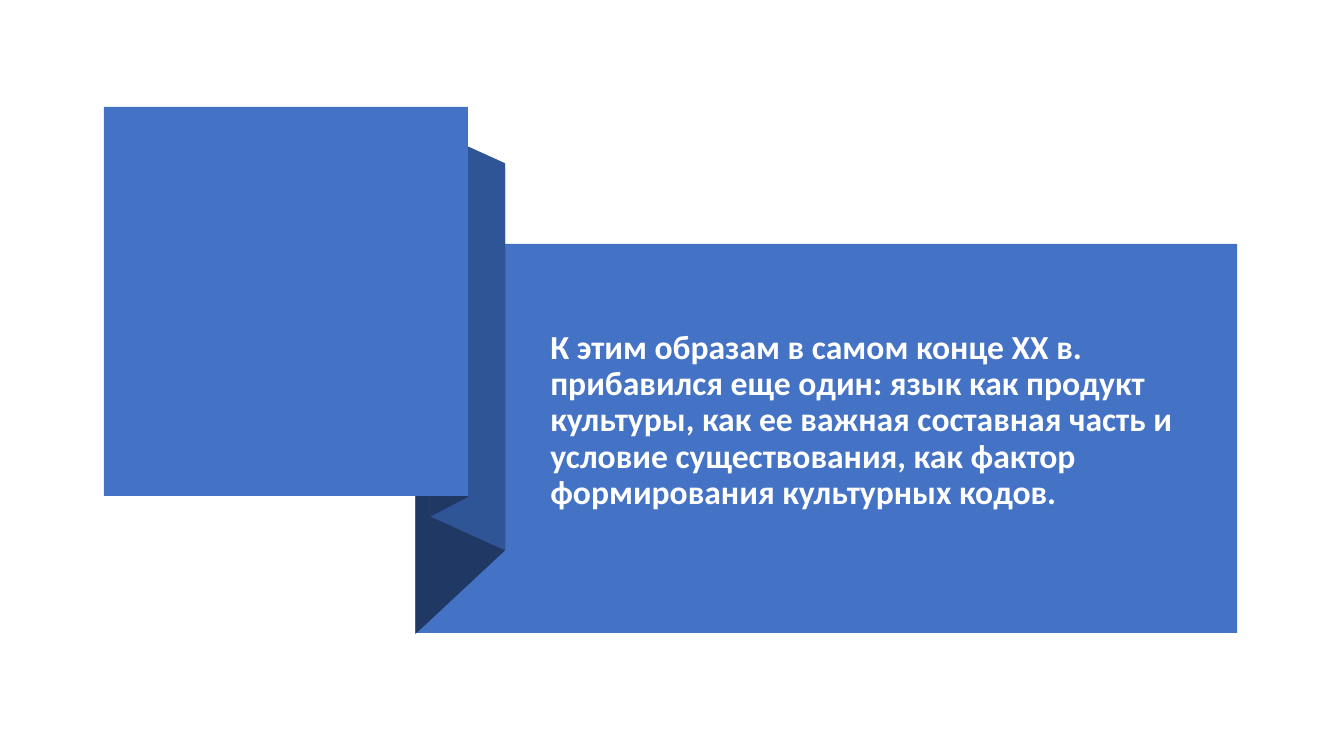
from pptx import Presentation
from pptx import util as u
from pptx.dml.color import RGBColor
from pptx.enum import shapes, text

HUES = {"main": "4472C4", "fold": "2F5597", "dark": "203864", "text": "FFFFFF"}
WORDS = ("К этим образам в самом конце XX в. прибавился еще один: "
         "язык как продукт культуры, как ее важная составная часть и "
         "условие существования, как фактор формирования культурных кодов.")


class Deck:
    font = "Calibri"

    def __init__(self, wide, high):
        self.prs = Presentation()
        self.prs.slide_width = u.Inches(wide)
        self.prs.slide_height = u.Inches(high)
        self.slide = self.prs.slides.add_slide(self.prs.slide_layouts[6])

    def hue(self, name):
        return RGBColor.from_string(HUES[name])

    def paint(self, shape, name):
        shape.shadow.inherit = False
        shape.fill.solid()
        shape.fill.fore_color.rgb = self.hue(name)
        shape.line.fill.background()

    def block(self, box, name):
        kind = shapes.MSO_SHAPE.RECTANGLE
        shape = self.slide.shapes.add_shape(kind, *map(u.Inches, box))
        self.paint(shape, name)

    def fold(self, points, name):
        first, *rest = [(u.Inches(x), u.Inches(y)) for x, y in points]
        pen = self.slide.shapes.build_freeform(*first)
        pen.add_line_segments(rest, close=True)
        self.paint(pen.convert_to_shape(), name)

    def label(self, box, words, size, name):
        frame = self.slide.shapes.add_textbox(*map(u.Inches, box)).text_frame
        frame.word_wrap = True
        frame.vertical_anchor = text.MSO_ANCHOR.MIDDLE
        # Deeper bottom inset lifts the text by half a line
        frame.margin_bottom = u.Inches(0.41)
        frame.text = words
        para = frame.paragraphs[0]
        para.line_spacing = 0.9
        font = para.runs[0].font
        font.name, font.size, font.bold = self.font, u.Pt(size), True
        font.color.rgb = self.hue(name)


def main():
    deck = Deck(13.33, 7.5)

    # Text panel
    deck.block((4.12, 2.42, 8.15, 3.86), "main")
    deck.label((5.36, 2.81, 6.43, 3.09), WORDS, 24, "text")

    # Ribbon folds, back to front
    deck.fold([(5.01, 5.46), (4.12, 6.29), (4.12, 2.48), (5.01, 1.66)], "dark")
    deck.fold([(5.01, 5.46), (4.26, 5.12), (4.26, 1.28), (5.01, 1.62)], "fold")
    deck.fold([(4.64, 4.93), (4.26, 5.13), (4.26, 1.27), (4.64, 1.08)], "dark")

    # Front square
    deck.block((1.03, 1.06, 3.61, 3.86), "main")

    deck.prs.save("out.pptx")


if __name__ == "__main__":
    main()
